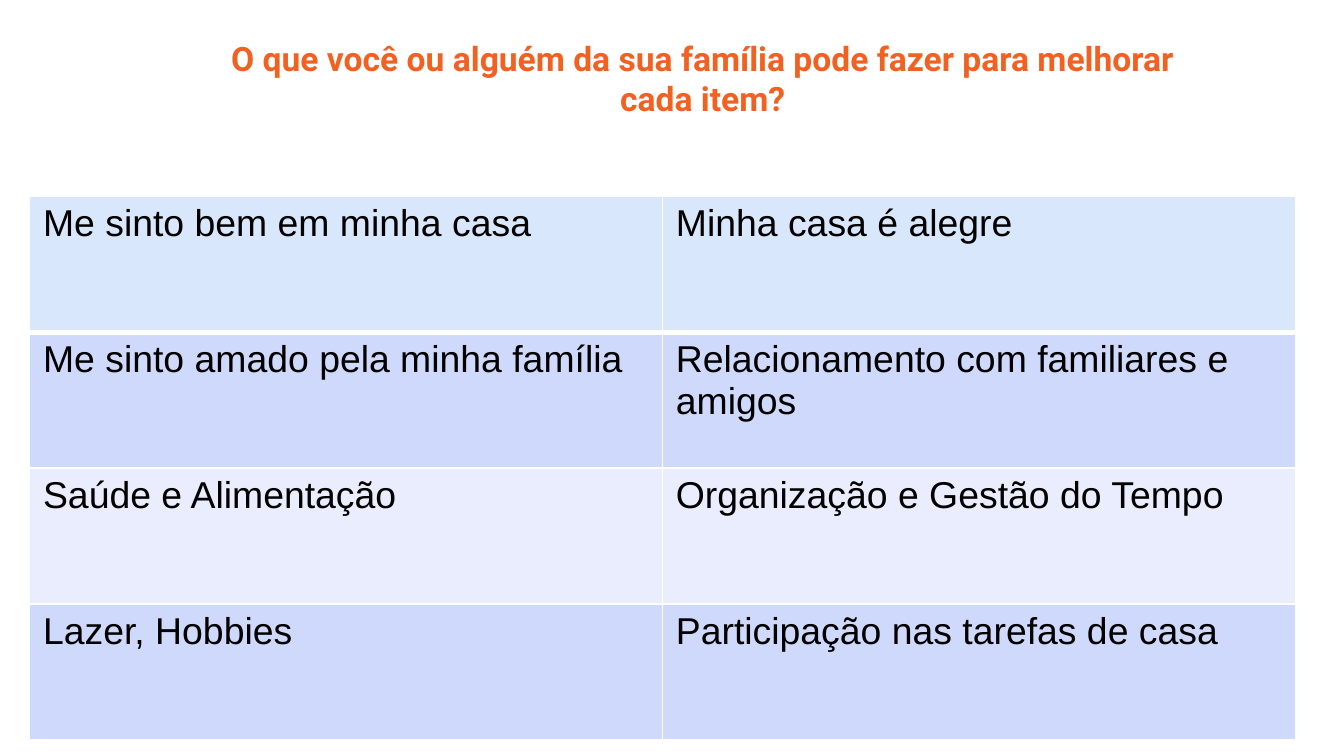
"""Build a slide with a title and a table of family life items."""
from lxml.etree import SubElement
from pptx import Presentation
from pptx.dml.color import RGBColor
from pptx.enum.text import MSO_ANCHOR, PP_ALIGN
from pptx.oxml.ns import qn
from pptx.util import Cm, Pt

COLORS = {
    "title": "F16122",
    "text": "000000",
    "border": "FFFFFF",
    "header": "D9E7FD",
    "odd": "CFD9FB",
    "even": "E9EDFD",
}
TITLE = "O que você ou alguém da sua família pode fazer para melhorar cada item?"
ITEMS = [
    ("Me sinto bem em minha casa", "Minha casa é alegre"),
    ("Me sinto amado pela minha família", "Relacionamento com familiares e amigos"),
    ("Saúde e Alimentação", "Organização e Gestão do Tempo"),
    ("Lazer, Hobbies", "Participação nas tarefas de casa"),
]
ROW_FILLS = ["header", "odd", "even", "odd"]


def write(tf, text, font, size, color, bold=False):
    p = tf.paragraphs[0]
    p.text = text
    p.font.name = font
    p.font.size = Pt(size)
    p.font.bold = bold
    p.font.color.rgb = RGBColor.from_string(COLORS[color])
    return p


def add_title(s):
    sp = s.shapes.add_textbox(Cm(3.78), Cm(0.46), Cm(19), Cm(4.42))
    tf = sp.text_frame
    tf.word_wrap = True
    tf.vertical_anchor = MSO_ANCHOR.TOP
    tf.margin_left = tf.margin_right = tf.margin_top = tf.margin_bottom = Cm(0.25)
    p = write(tf, TITLE, "Roboto", 18, "title", bold=True)
    p.alignment = PP_ALIGN.CENTER


def set_borders(cell, widths):
    tcPr = cell._tc.get_or_add_tcPr()
    for side, width in widths.items():
        ln = SubElement(tcPr, qn(f"a:ln{side}"), w=str(Pt(width)))
        fill = SubElement(ln, qn("a:solidFill"))
        SubElement(fill, qn("a:srgbClr"), val=COLORS["border"])


def add_items_table(s):
    rows, cols = len(ITEMS), len(ITEMS[0])
    frame = s.shapes.add_table(rows, cols, Cm(0.56), Cm(3.71), Cm(23.92), Cm(10.28))
    table = frame.table
    for r, texts in enumerate(ITEMS):
        top = 3 if r == 1 else 1
        bottom = 3 if r == 0 else 1
        for c, text in enumerate(texts):
            cell = table.cell(r, c)
            set_borders(cell, {"L": 1, "R": 1, "T": top, "B": bottom})
            cell.fill.solid()
            cell.fill.fore_color.rgb = RGBColor.from_string(COLORS[ROW_FILLS[r]])
            write(cell.text_frame, text, "Arial", 20, "text")


def main():
    prs = Presentation()
    prs.slide_width, prs.slide_height = Cm(25.4), Cm(14.29)
    s = prs.slides.add_slide(prs.slide_layouts[6])
    add_title(s)
    add_items_table(s)
    prs.save("out.pptx")


if __name__ == "__main__":
    main()
